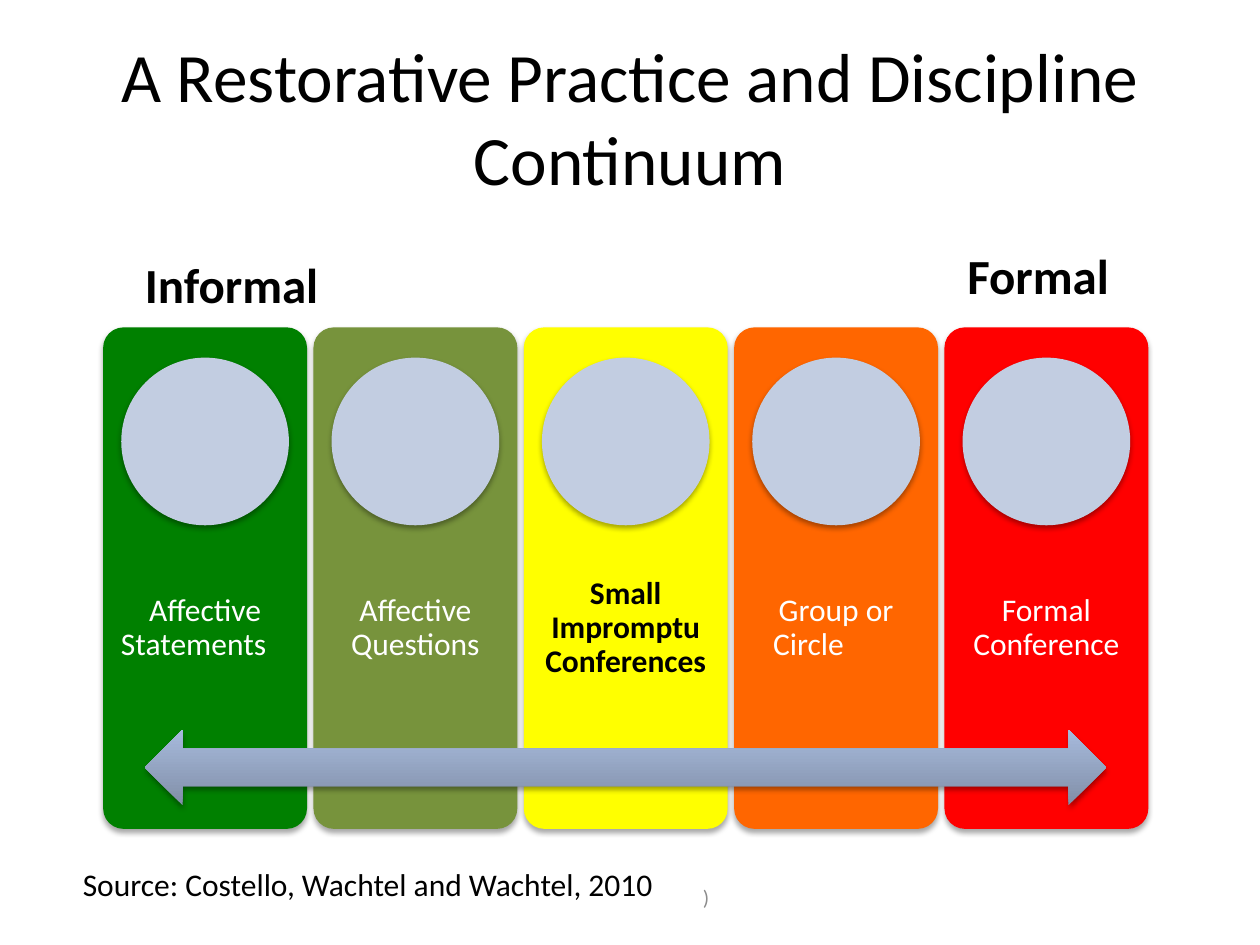
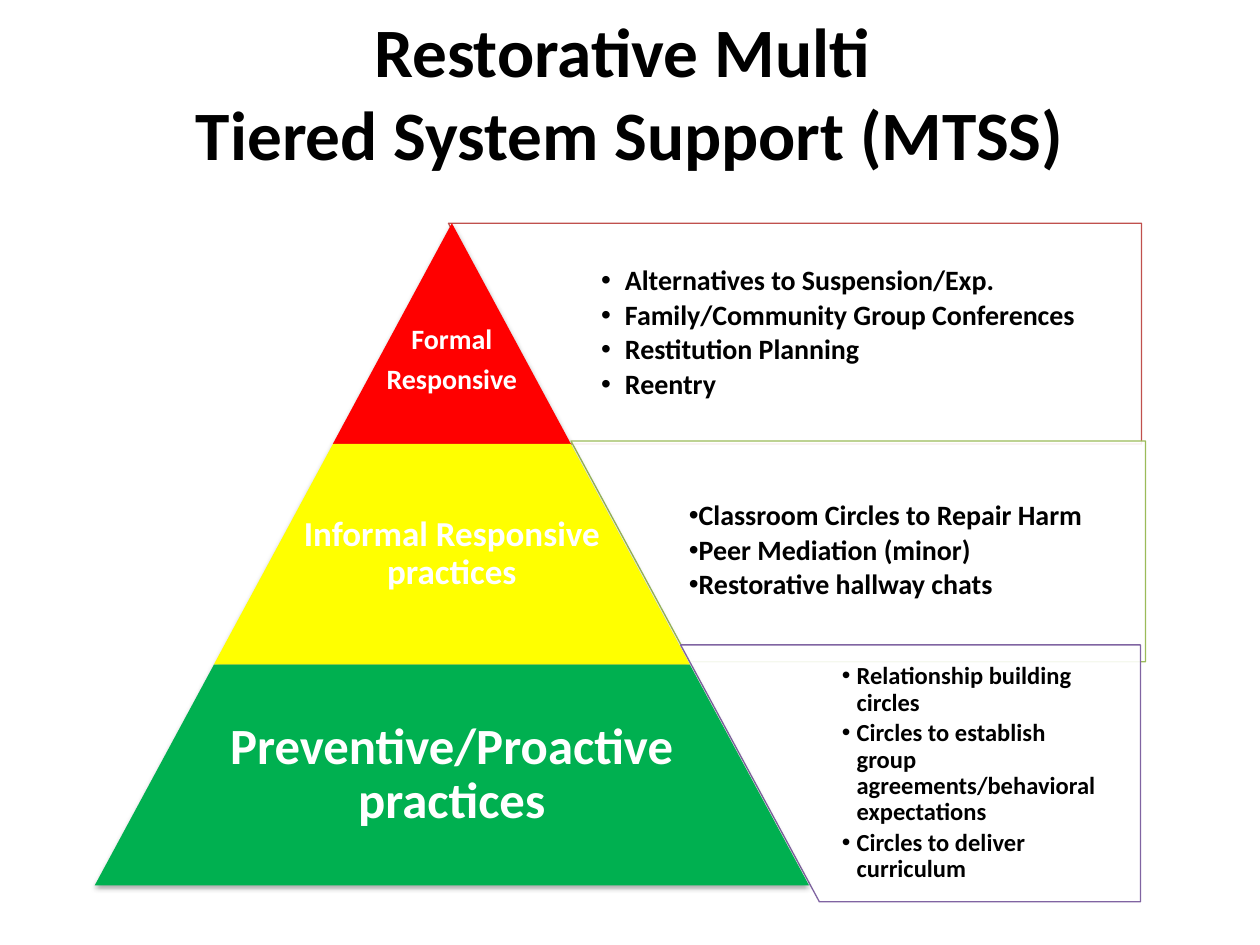
"""Build two slides on restorative practice: a continuum and a tiered pyramid."""
from dataclasses import dataclass

from lxml import etree
from pptx import Presentation
from pptx import util as u
from pptx.dml.color import RGBColor
from pptx.enum import shapes, text
from pptx.oxml import ns


@dataclass(frozen=True)
class Theme:
    font: str = "Calibri"
    ink: str = "000000"
    paper: str = "FFFFFF"
    muted: str = "8C8C8C"
    circle: str = "C2CDE1"
    arrow_dark: str = "818FA8"
    arrow_light: str = "A7BADC"
    title: float = 39.6
    label: float = 28
    body: float = 18
    small: float = 12


THEME = Theme()
SHAPE = shapes.MSO_SHAPE
CENTER = text.PP_ALIGN.CENTER
MIDDLE = text.MSO_ANCHOR.MIDDLE

CONTINUUM_TITLE = "A Restorative Practice and Discipline Continuum"
STAGES = [
    ("Affective Statements\t", "008000", THEME.paper, False),
    ("Affective Questions", "77933C", THEME.paper, False),
    ("Small Impromptu Conferences", "FFFF00", THEME.ink, True),
    ("Group or Circle\t", "FF6600", THEME.paper, False),
    ("Formal Conference", "FF0000", THEME.paper, False),
]
LABELS = [
    ("Informal", (2.67, 5, 4.19, 1.45), THEME.label, True),
    ("Formal", (19.25, 4.83, 3.56, 1.45), THEME.label, True),
    ("Source: Costello, Wachtel and Wachtel, 2010", (1.42, 17.32, 12.22, 1.02), THEME.body, False),
]

PYRAMID_TITLE = "Restorative Multi \vTiered System Support (MTSS)"
TIERS = [
    dict(name=["Formal", "Responsive"], fill="FF0000", size=16, name_share=1, name_drop=1.1,
         panel=(9.04, 4.5, 13.97, 4.45), line="C0504D", items_left=11.43,
         items_size=16, margin=0.69, indent=(0.48, -0.48),
         items=["Alternatives to Suspension/Exp.", "Family/Community Group Conferences",
                "Restitution Planning", "Reentry"]),
    dict(name=["Informal Responsive practices"], fill="FFFF00", size=20, name_share=0.65, name_drop=0,
         panel=(11.51, 8.89, 11.58, 4.45), line="9BBB59", items_left=13.89,
         items_size=16, margin=0, indent=(0, -0.48),
         items=["Classroom Circles to Repair Harm", "Peer Mediation (minor)",
                "Restorative hallway chats"]),
    dict(name=["Preventive/Proactive practices"], fill="00B050", size=29, name_share=0.65, name_drop=0,
         panel=(13.72, 13, 9.27, 5.18), line="8064A2", items_left=16.28,
         items_size=14, margin=0.69, indent=(0.3, -0.3),
         items=["Relationship building circles",
                "Circles to establish group agreements/behavioral expectations",
                "Circles to deliver curriculum"]),
]


def cm(area):
    return [u.Cm(length) for length in area]


def add_text(page, paragraphs, area, size, color=THEME.ink, bold=False, align=None, anchor=None,
             margins=None, wrap=True, spacing=None, after=0, indent=None):
    box = page.shapes.add_textbox(*cm(area))
    frame = box.text_frame
    frame.word_wrap = wrap
    if anchor is not None:
        frame.vertical_anchor = anchor
    if margins is not None:
        (frame.margin_left, frame.margin_top,
         frame.margin_right, frame.margin_bottom) = cm(margins)
    for index, words in enumerate(paragraphs):
        para = frame.add_paragraph() if index else frame.paragraphs[0]
        para.text = words
        para.alignment = align
        if spacing:
            para.line_spacing = spacing
            para.space_after = u.Pt(size * after)
        if indent:
            add_bullet(para, *indent)
        para.font.name = THEME.font
        para.font.size = u.Pt(size)
        para.font.bold = bold
        para.font.color.rgb = RGBColor.from_string(color)
    return box


def add_bullet(para, left, first):
    properties = para._p.get_or_add_pPr()
    properties.set("marL", str(u.Cm(left)))
    properties.set("indent", str(u.Cm(first)))
    etree.SubElement(properties, ns.qn("a:buFont")).set("typeface", "Arial")
    etree.SubElement(properties, ns.qn("a:buChar")).set("char", "•")


def add_figure(page, kind, area, fill=None, line=None, shadow=True):
    figure = page.shapes.add_shape(kind, *cm(area))
    figure.shadow.inherit = False
    if fill:
        figure.fill.solid()
        figure.fill.fore_color.rgb = RGBColor.from_string(fill)
    if line:
        figure.line.color.rgb = RGBColor.from_string(line)
        figure.line.width = u.Pt(0.75)
    else:
        figure.line.fill.background()
    if shadow:
        effects = figure.element.spPr.find(ns.qn("a:effectLst"))
        outer = etree.SubElement(effects, ns.qn("a:outerShdw"), blurRad=str(u.Pt(3.1)),
                                 dist=str(u.Pt(1.8)), dir="5400000", rotWithShape="0")
        shade = etree.SubElement(outer, ns.qn("a:srgbClr"), val=THEME.ink)
        etree.SubElement(shade, ns.qn("a:alpha"), val="35000")
    return figure


def add_title(page, words, height, bold=False):
    add_text(page, [words], (1.27, 0.76, 22.86, height), THEME.title, bold=bold,
             align=CENTER, anchor=MIDDLE)


def build_continuum(page):
    add_title(page, CONTINUUM_TITLE, 3.18)
    left, pitch, width, diameter = 2.08, 4.24, 4.11, 3.38
    for index, (words, fill, color, bold) in enumerate(STAGES):
        x = left + index * pitch
        card = add_figure(page, SHAPE.ROUNDED_RECTANGLE, (x, 6.6, width, 10.11), fill)
        card.adjustments[0] = 0.1
        add_text(page, [words], (x, 10.64, width, 4.04), THEME.body, color, bold, CENTER, MIDDLE,
                 margins=[0.36] * 4, spacing=0.9, after=0.35)
        add_figure(page, SHAPE.OVAL, (x + (width - diameter) / 2, 7.21, diameter, diameter),
                   THEME.circle)
    arrow = add_figure(page, SHAPE.LEFT_RIGHT_ARROW, (2.92, 14.71, 19.38, 1.52))
    arrow.fill.gradient()
    arrow.fill.gradient_angle = 90
    for stop, color in zip(arrow.fill.gradient_stops, (THEME.arrow_dark, THEME.arrow_light)):
        stop.color.rgb = RGBColor.from_string(color)
    for words, area, size, bold in LABELS:
        add_text(page, [words], area, size, bold=bold, wrap=False)
    add_text(page, [")"], (14.17, 17.58, 0.13, 1.02), THEME.small, THEME.muted,
             align=CENTER, anchor=MIDDLE, margins=[0] * 4, wrap=False)


def build_pyramid(page):
    add_title(page, PYRAMID_TITLE, 2.16, bold=True)
    apex, top, height, half_step, slope = 9.11, 4.5, 4.45, 2.4, 0.54
    for index, tier in enumerate(TIERS):
        panel = add_figure(page, SHAPE.NON_ISOSCELES_TRAPEZOID, tier["panel"], THEME.paper,
                           tier["line"], shadow=False)
        panel.rotation = 180
        panel.adjustments[0], panel.adjustments[1] = 0, slope
        paint = panel.element.spPr.find(ns.qn("a:solidFill")).find(ns.qn("a:srgbClr"))
        etree.SubElement(paint, ns.qn("a:alpha"), val="90000")
        x, y, width, depth = tier["panel"]
        items_left = tier["items_left"]
        add_text(page, tier["items"], (items_left, y, x + width - items_left, depth),
                 tier["items_size"], bold=True, anchor=MIDDLE, margins=[tier["margin"]] * 4,
                 spacing=0.9, after=0.15, indent=tier["indent"])

        half = half_step * (index + 1)
        y = top + index * height
        layer = add_figure(page, SHAPE.TRAPEZOID, (apex - half, y, 2 * half, height), tier["fill"])
        layer.adjustments[0] = slope
        reach = half * tier["name_share"]
        add_text(page, tier["name"], (apex - reach, y, 2 * reach, height), tier["size"],
                 THEME.paper, True, CENTER, MIDDLE,
                 margins=(0.08, 0.08 + tier["name_drop"], 0.08, 0.08), spacing=0.9, after=0.35)


def main():
    deck = Presentation()
    deck.slide_width, deck.slide_height = u.Cm(25.4), u.Cm(19.05)
    for build in (build_continuum, build_pyramid):
        build(deck.slides.add_slide(deck.slide_layouts[6]))
    deck.save("out.pptx")


if __name__ == "__main__":
    main()
